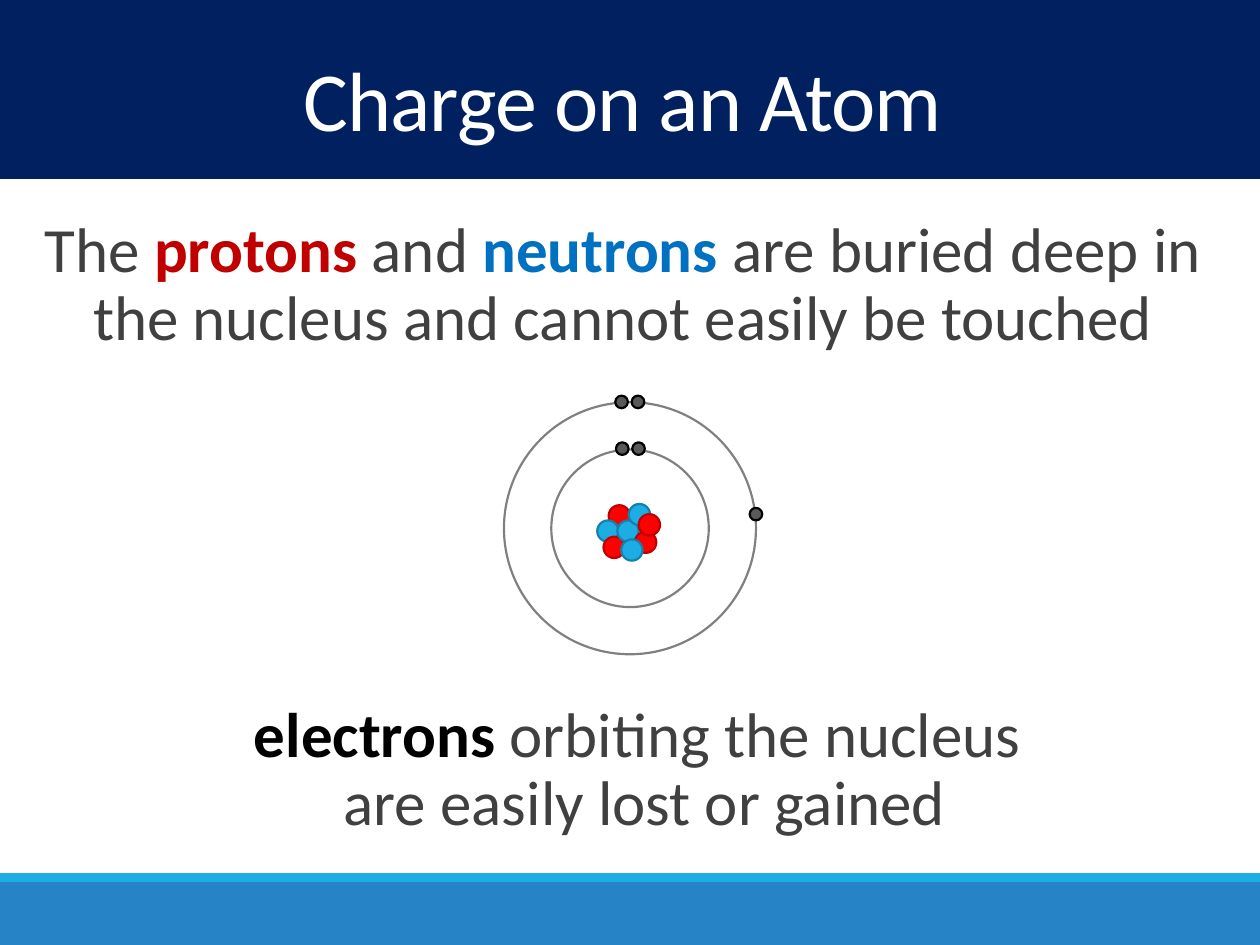
from pptx import Presentation
from pptx.dml.color import RGBColor
from pptx.enum.shapes import MSO_SHAPE
from pptx.enum.text import MSO_ANCHOR, PP_ALIGN
from pptx.util import Pt

WHITE = RGBColor(0xFF, 0xFF, 0xFF)
BLACK = RGBColor(0, 0, 0)
NAVY = RGBColor(0x00, 0x20, 0x60)
FOOTER_BLUE = RGBColor(0x26, 0x83, 0xC6)
SKY = RGBColor(0x1C, 0xAD, 0xE4)
SKY_EDGE = RGBColor(0x15, 0x80, 0xA9)
RED = RGBColor(0xFF, 0, 0)
DARK_RED = RGBColor(0xC0, 0, 0)
BLUE = RGBColor(0x00, 0x70, 0xC0)
TEXT_GREY = RGBColor(0x40, 0x40, 0x40)
RING_GREY = RGBColor(0x80, 0x80, 0x80)
ELECTRON_GREY = RGBColor(0x59, 0x59, 0x59)

BANDS = [
    (504, 36, FOOTER_BLUE),
    (499, 5, SKY),
    (0, 102.2, NAVY),
]
TITLE = [[("Charge on an Atom ", WHITE, False)]]
NUCLEUS_TEXT = [[
    ("The ", TEXT_GREY, False),
    ("protons", DARK_RED, True),
    (" and ", TEXT_GREY, False),
    ("neutrons", BLUE, True),
    (" are buried deep in the nucleus and cannot easily be touched", TEXT_GREY, False),
]]
ELECTRON_TEXT = [
    [("electrons", BLACK, True), (" orbiting the nucleus ", TEXT_GREY, False)],
    [("are easily lost or gained", TEXT_GREY, False)],
]

CENTER_X, CENTER_Y = 360, 301.9
PARTICLES = {
    "proton": (12.2, RED, DARK_RED),
    "neutron": (12.2, SKY, SKY_EDGE),
    "electron": (7.2, ELECTRON_GREY, BLACK),
    "inner shell": (90, None, RING_GREY),
    "outer shell": (144, None, RING_GREY),
}
ATOM = [
    ("inner shell", 0, 0),
    ("proton", -6.1, -7.1),
    ("neutron", -12.6, 1.6),
    ("proton", -9, 10.9),
    ("neutron", -1.1, 1.6),
    ("proton", 9, 8),
    ("neutron", 5.4, -7.8),
    ("proton", 11.1, -2),
    ("neutron", 1.1, 12.4),
    ("electron", -4.4, -45.5),
    ("electron", 4.9, -45.5),
    ("outer shell", 0, 0),
    ("electron", -4.8, -72.2),
    ("electron", 4.6, -72.2),
    ("electron", 72, -8.1),
]

deck = Presentation()
deck.slide_width, deck.slide_height = Pt(720), Pt(540)
slide = deck.slides.add_slide(deck.slide_layouts[6])


def add_figure(preset, left, top, width, height, fill=None, edge=None):
    figure = slide.shapes.add_shape(preset, Pt(left), Pt(top), Pt(width), Pt(height))
    figure.shadow.inherit = False
    if fill is None:
        figure.fill.background()
    else:
        figure.fill.solid()
        figure.fill.fore_color.rgb = fill
    if edge is None:
        figure.line.fill.background()
    else:
        figure.line.color.rgb = edge
        figure.line.width = Pt(1.25)


def add_text(paragraphs, *, left, top, width, height, size=36, line_spacing=0.9,
             side_inset=0, anchor=MSO_ANCHOR.TOP, tracking=0):
    frame = slide.shapes.add_textbox(Pt(left), Pt(top), Pt(width), Pt(height)).text_frame
    frame.word_wrap = True
    frame.vertical_anchor = anchor
    frame.margin_left = frame.margin_right = Pt(side_inset)
    frame.margin_top = frame.margin_bottom = Pt(3.6)
    for index, runs in enumerate(paragraphs):
        paragraph = frame.add_paragraph() if index else frame.paragraphs[0]
        paragraph.alignment = PP_ALIGN.CENTER
        paragraph.line_spacing = line_spacing
        for words, color, bold in runs:
            run = paragraph.add_run()
            run.text = words
            run.font.name = "Calibri"
            run.font.size = Pt(size)
            run.font.bold = bold
            run.font.color.rgb = color
            if tracking:
                run.font._element.set("spc", str(round(tracking * 100)))


for band_top, band_height, band_color in BANDS:
    add_figure(MSO_SHAPE.RECTANGLE, 0, band_top, 720, band_height, band_color)

add_text(TITLE, left=2, top=30.2, width=718, height=60.5, size=48, line_spacing=0.85,
         side_inset=7.2, anchor=MSO_ANCHOR.MIDDLE, tracking=-0.5)
add_text(NUCLEUS_TEXT, left=19.4, top=121, width=673.2, height=93.6)

for particle, dx, dy in ATOM:
    diameter, fill, edge = PARTICLES[particle]
    add_figure(MSO_SHAPE.OVAL, CENTER_X + dx - diameter / 2, CENTER_Y + dy - diameter / 2,
               diameter, diameter, fill, edge)

add_text(ELECTRON_TEXT, left=31.7, top=398.2, width=673.2, height=90)

deck.save("out.pptx")
